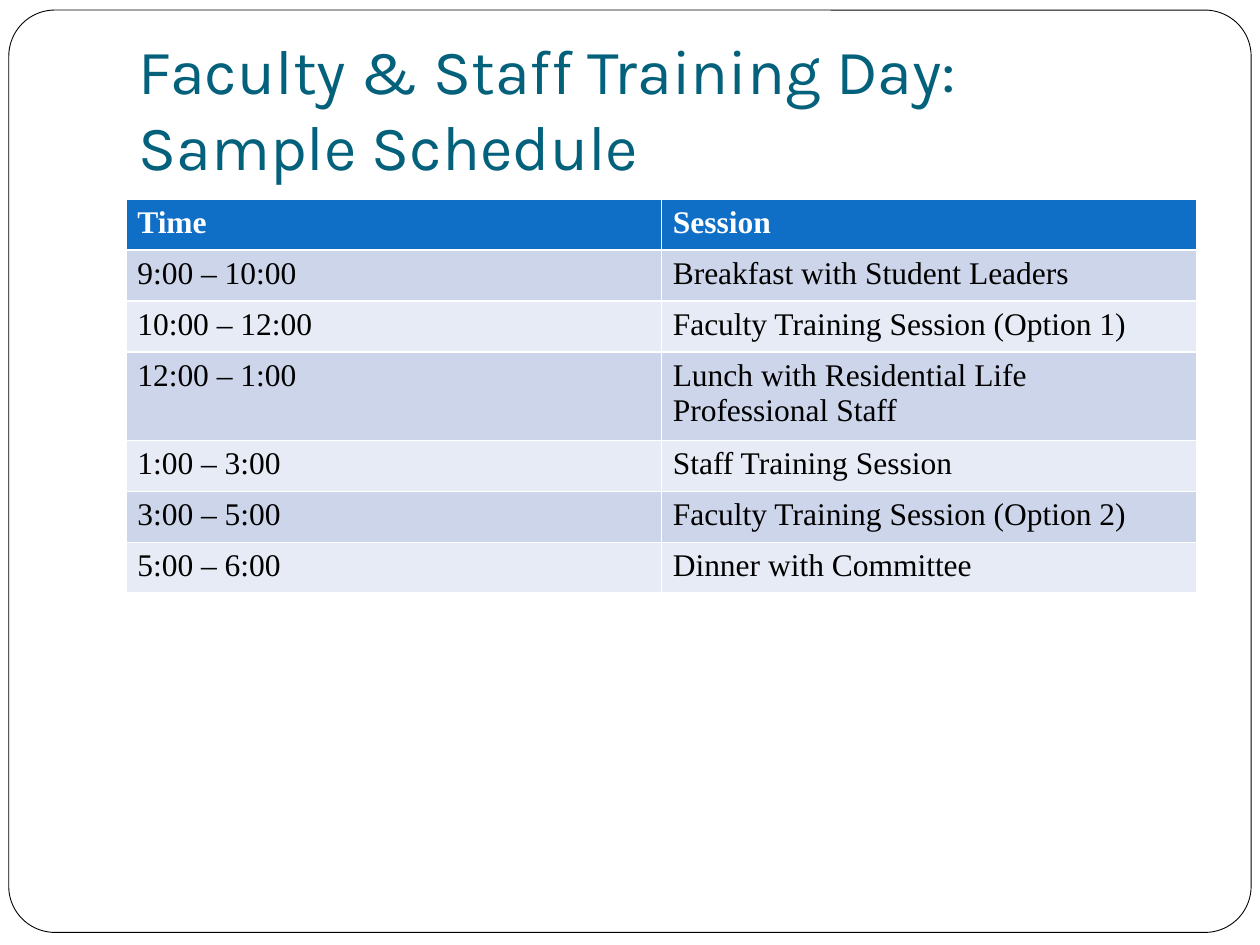
import pptx
import pptx.util
from pptx.dml.color import RGBColor
from pptx.enum.shapes import MSO_SHAPE
from pptx.enum.text import MSO_ANCHOR, PP_ALIGN

WHITE = RGBColor(0xFF, 0xFF, 0xFF)
BLACK = RGBColor(0x00, 0x00, 0x00)
TEAL = RGBColor(0x04, 0x61, 0x7B)
BLUE = RGBColor(0x0F, 0x6F, 0xC6)
BAND_DARK = RGBColor(0xCC, 0xD5, 0xEA)
BAND_LIGHT = RGBColor(0xE7, 0xEB, 0xF5)

SCHEDULE = [
    ("Time", "Session"),
    ("9:00 – 10:00", "Breakfast with Student Leaders"),
    ("10:00 – 12:00", "Faculty Training Session (Option 1)"),
    ("12:00 – 1:00", "Lunch with Residential Life Professional Staff"),
    ("1:00 – 3:00", "Staff Training Session"),
    ("3:00 – 5:00", "Faculty Training Session (Option 2)"),
    ("5:00 – 6:00", "Dinner with Committee"),
]
LUNCH_ROW = 3

prs = pptx.Presentation()
prs.slide_width = W = pptx.util.Inches(10)
prs.slide_height = pptx.util.Inches(7.5)
s = prs.slides.add_slide(prs.slide_layouts[5])
left, width = int(W * 0.1), int(W * 0.85)

# Rounded frame, behind the title
frame = s.shapes.add_shape(
    MSO_SHAPE.ROUNDED_RECTANGLE, pptx.util.Inches(0.07), pptx.util.Inches(0.08),
    pptx.util.Inches(9.86), pptx.util.Inches(7.32))
frame.adjustments[0] = 0.05
frame.shadow.inherit = False
frame.fill.solid()
frame.fill.fore_color.rgb = WHITE
frame.line.color.rgb = BLACK
frame.line.width = pptx.util.Pt(0.5)
s.shapes._spTree.insert(2, frame._element)

# Title
title = s.shapes.title
title.left, title.width = left, width
title.top, title.height = pptx.util.Inches(0.3), pptx.util.Inches(1.25)
tf = title.text_frame
tf.word_wrap = True
tf.vertical_anchor = MSO_ANCHOR.BOTTOM
tf.margin_bottom = pptx.util.Inches(0.1)
p = tf.paragraphs[0]
p.text = "Faculty & Staff Training Day: Sample Schedule"
p.alignment = PP_ALIGN.LEFT
p.font.name = "Karla"
p.font.size = pptx.util.Pt(36)
p.font.color.rgb = TEAL

# Schedule table: equal rows, except the two-line lunch row
table_height, lunch_height = pptx.util.Inches(3.13), pptx.util.Inches(0.7)
row_height = (table_height - lunch_height) // (len(SCHEDULE) - 1)
table = s.shapes.add_table(
    len(SCHEDULE), 2, left, pptx.util.Inches(1.58), width, table_height).table

for i, entry in enumerate(SCHEDULE):
    table.rows[i].height = lunch_height if i == LUNCH_ROW else row_height
    header = i == 0
    for j, text in enumerate(entry):
        cell = table.cell(i, j)
        cell.fill.solid()
        cell.fill.fore_color.rgb = BLUE if header else BAND_DARK if i % 2 else BAND_LIGHT
        cell.margin_left = cell.margin_right = pptx.util.Inches(0.09)
        p = cell.text_frame.paragraphs[0]
        p.text = text
        p.font.name = "Times New Roman"
        p.font.size = pptx.util.Pt(18)
        p.font.bold = header
        p.font.color.rgb = WHITE if header else BLACK

prs.save("out.pptx")
